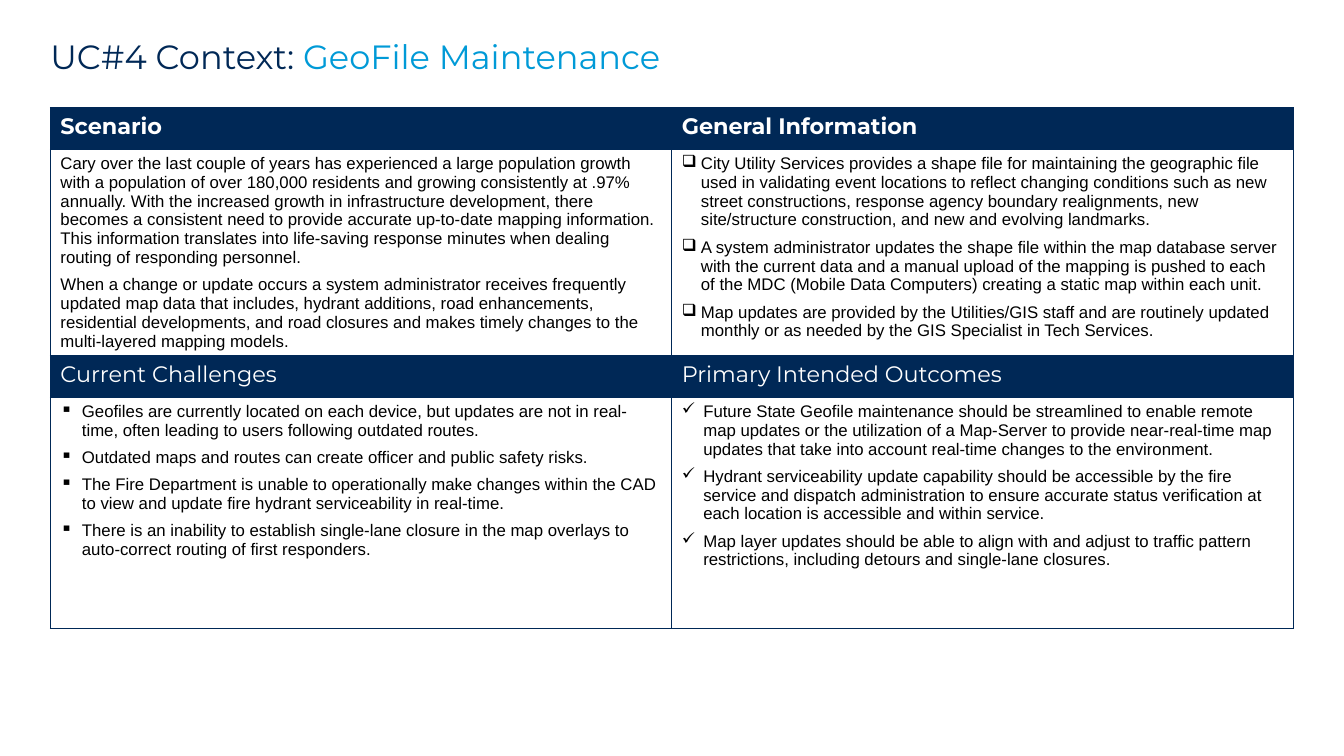
import dataclasses

import pptx
import pptx.dml.color
import pptx.enum.text
import pptx.oxml
import pptx.oxml.ns
import pptx.util
from pptx.util import Cm


@dataclasses.dataclass(frozen=True)
class Theme:
    navy: str = "002856"
    sky: str = "009AD7"
    white: str = "FFFFFF"
    black: str = "000000"
    head: str = "Montserrat"
    body: str = "Arial"
    title: int = 24
    label: int = 16
    text: int = 12


THEME = Theme()

SCENARIO = [
    "Cary over the last couple of years has experienced a large population growth with a "
    "population of over 180,000 residents and growing consistently at .97% annually. With the "
    "increased growth in infrastructure development, there becomes a consistent need to provide "
    "accurate up-to-date mapping information. This information translates into life-saving "
    "response minutes when dealing routing of responding personnel.",
    "When a change or update occurs a system administrator receives frequently updated map data "
    "that includes, hydrant additions, road enhancements, residential developments, and road "
    "closures and makes timely changes to the multi-layered mapping models.",
]
GENERAL = [
    "City Utility Services provides a shape file for maintaining the geographic file used in "
    "validating event locations to reflect changing conditions such as new street constructions, "
    "response agency boundary realignments, new site/structure construction, and new and "
    "evolving landmarks.",
    "A system administrator updates the shape file within the map database server with the "
    "current data and a manual upload of the mapping is pushed to each of the MDC (Mobile Data "
    "Computers) creating a static map within each unit.",
    "Map updates are provided by the Utilities/GIS staff and are routinely updated monthly or as "
    "needed by the GIS Specialist in Tech Services.",
]
ISSUES = [
    "Geofiles are currently located on each device, but updates are not in real-time, often "
    "leading to users following outdated routes.",
    "Outdated maps and routes can create officer and public safety risks.",
    "The Fire Department is unable to operationally make changes within the CAD to view and "
    "update fire hydrant serviceability in real-time.",
    "There is an inability to establish single-lane closure in the map overlays to auto-correct "
    "routing of first responders.",
]
GOALS = [
    "Future State Geofile maintenance should be streamlined to enable remote map updates or the "
    "utilization of a Map-Server to provide near-real-time map updates that take into account "
    "real-time changes to the environment.",
    "Hydrant serviceability update capability should be accessible by the fire service and "
    "dispatch administration to ensure accurate status verification at each location is "
    "accessible and within service.",
    "Map layer updates should be able to align with and adjust to traffic pattern restrictions, "
    "including detours and single-lane closures.",
]

# Each panel: heading, bold heading, paragraphs, bullet, indent
PANELS = [
    [("Scenario", True, SCENARIO, None, 0),
     ("General Information", True, GENERAL, "❑", Cm(0.48))],
    [("Current Challenges", False, ISSUES, "▪", Cm(0.54)),
     ("Primary Intended Outcomes", False, GOALS, "✓", Cm(0.54))],
]


def rgb(code):
    return pptx.dml.color.RGBColor.from_string(code)


def style(font, name, size, color, bold=False):
    font.name = name
    font.size = pptx.util.Pt(size)
    font.bold = bold
    font.color.rgb = rgb(color)


def bullet(para, mark, indent):
    props = para._p.get_or_add_pPr()
    props.set("marL", str(indent))
    props.set("indent", str(-indent))
    char = pptx.oxml.parse_xml(f'<a:buChar {pptx.oxml.ns.nsdecls("a")} char="{mark}"/>')
    props.append(char)


def border(cell):
    props = cell._tc.get_or_add_tcPr()
    for side in "LRTB":
        props.append(pptx.oxml.parse_xml(
            f'<a:ln{side} {pptx.oxml.ns.nsdecls("a")} w="12700"><a:solidFill>'
            f'<a:srgbClr val="{THEME.navy}"/></a:solidFill></a:ln{side}>'))


def fill(cell, color):
    border(cell)
    cell.fill.solid()
    cell.fill.fore_color.rgb = rgb(color)


def write(cell, lines, look, mark=None, indent=0):
    frame = cell.text_frame
    for i, line in enumerate(lines):
        para = frame.paragraphs[0] if i == 0 else frame.add_paragraph()
        para.text = line
        para.space_after = pptx.util.Pt(6)
        if mark:
            bullet(para, mark, indent)
        style(para.font, *look)


def add_title(slide):
    box = slide.shapes.title
    box.left, box.top, box.width, box.height = Cm(1.27), Cm(1.02), Cm(31.32), Cm(1.22)
    frame = box.text_frame
    frame.margin_left = frame.margin_right = frame.margin_top = frame.margin_bottom = 0
    frame.vertical_anchor = pptx.enum.text.MSO_ANCHOR.TOP
    frame.auto_size = pptx.enum.text.MSO_AUTO_SIZE.NONE
    para = frame.paragraphs[0]
    para.alignment = pptx.enum.text.PP_ALIGN.LEFT
    para.line_spacing = 0.9
    para.space_after = pptx.util.Pt(12)
    for text, color in (("UC#4 Context: ", THEME.navy), ("GeoFile Maintenance", THEME.sky)):
        run = para.add_run()
        run.text = text
        style(run.font, THEME.head, THEME.title, color)


def add_grid(slide):
    heights = [Cm(1.04), Cm(5.18), Cm(1.04), Cm(5.84)]
    table = slide.shapes.add_table(
        4, 2, Cm(1.27), Cm(2.72), Cm(31.32), sum(heights)).table
    for row, height in zip(table.rows, heights):
        row.height = height
    for r, band in enumerate(PANELS):
        for c, (name, bold, lines, mark, indent) in enumerate(band):
            # Heading cell, then the text below it
            top, low = table.cell(2 * r, c), table.cell(2 * r + 1, c)
            fill(top, THEME.navy)
            write(top, [name], (THEME.head, THEME.label, THEME.white, bold))
            fill(low, THEME.white)
            write(low, lines, (THEME.body, THEME.text, THEME.black), mark, indent)


def main():
    deck = pptx.Presentation()
    deck.slide_width, deck.slide_height = Cm(33.87), Cm(19.05)
    slide = deck.slides.add_slide(deck.slide_layouts.get_by_name("Title Only"))
    add_title(slide)
    add_grid(slide)
    deck.save("out.pptx")


if __name__ == "__main__":
    main()
